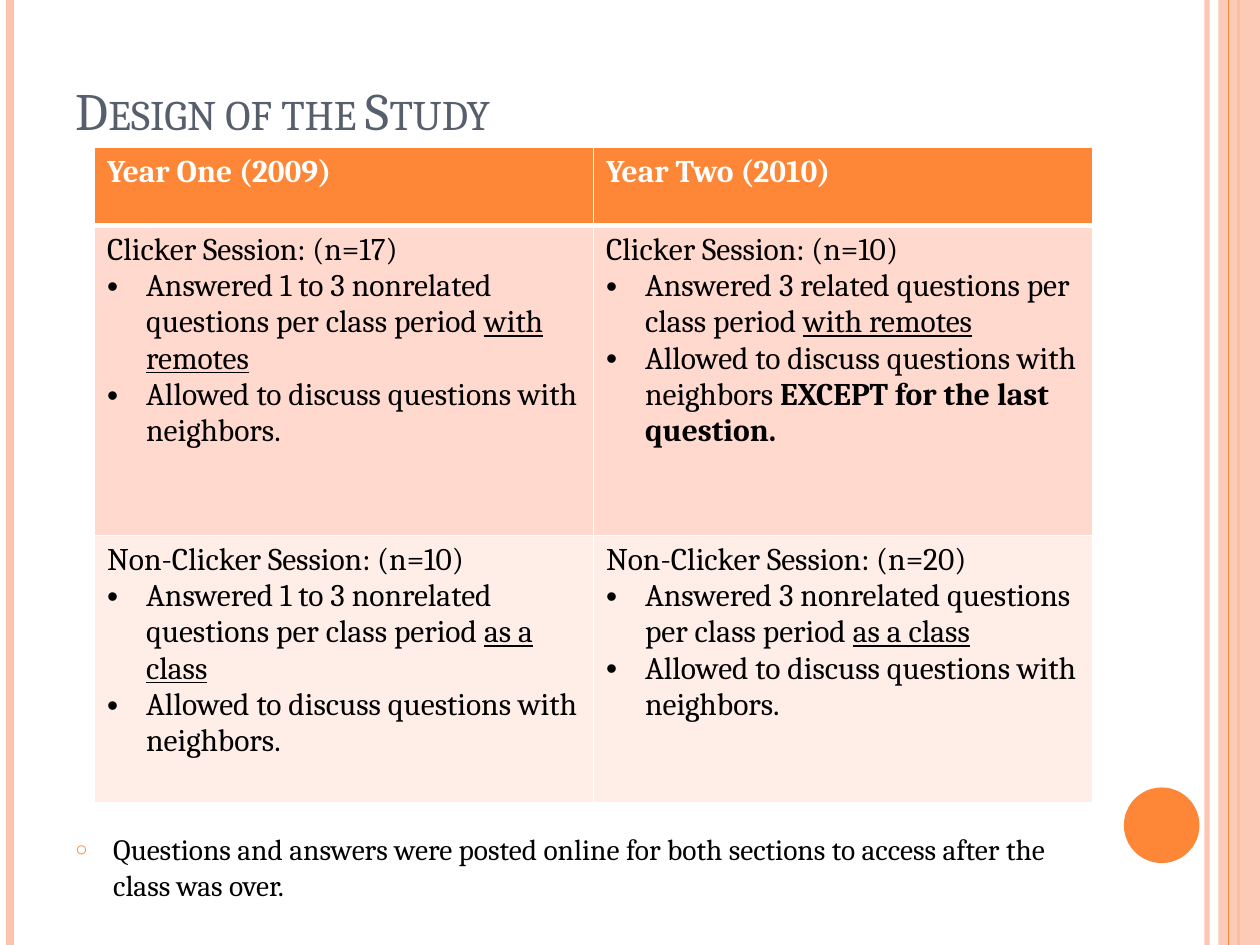
from lxml.etree import SubElement
from pptx import Presentation
from pptx.dml.color import RGBColor
from pptx.enum.shapes import MSO_CONNECTOR, MSO_SHAPE
from pptx.enum.text import MSO_ANCHOR, MSO_AUTO_SIZE, PP_ALIGN
from pptx.oxml import parse_xml
from pptx.oxml.ns import nsdecls, qn
from pptx.util import Inches, Pt

FONT = "Cambria"
ORANGE = RGBColor(0xFE, 0x86, 0x37)
PEACH = RGBColor(0xFE, 0xC3, 0xAE)
SLATE = RGBColor(0x57, 0x5F, 0x6D)
ROSE = RGBColor(0xFF, 0xD9, 0xCE)
BLUSH = RGBColor(0xFF, 0xED, 0xE8)
BLACK = RGBColor(0, 0, 0)
WHITE = RGBColor(0xFF, 0xFF, 0xFF)

PLAIN, UNDERLINE, BOLD = "plain", "underline", "bold"
DISCUSS = [("Allowed to discuss questions with neighbors.", PLAIN)]
HEADERS = ["Year One (2009)", "Year Two (2010)"]


def answered(kind, manner):
    """Return the runs of a bullet about the questions answered."""
    return [(f"Answered {kind} questions per class period ", PLAIN), (manner, UNDERLINE)]


SESSIONS = [
    [
        ("Clicker Session: (n=17)", [answered("1 to 3 nonrelated", "with remotes"), DISCUSS]),
        ("Clicker Session: (n=10)", [
            answered("3 related", "with remotes"),
            [("Allowed to discuss questions with neighbors ", PLAIN),
             ("EXCEPT for the last question.", BOLD)],
        ]),
    ],
    [
        ("Non-Clicker Session: (n=10)", [answered("1 to 3 nonrelated", "as a class"), DISCUSS]),
        ("Non-Clicker Session: (n=20)", [answered("3 nonrelated", "as a class"), DISCUSS]),
    ],
]


def set_font(font, size, color, bold=False):
    """Apply the deck font with a size, colour and weight."""
    font.name, font.size, font.bold = FONT, Pt(size), bold
    font.color.rgb = color


def set_alpha(fill_parent, percent):
    """Make the solid fill under an element partly transparent."""
    color = next(fill_parent.iter(qn("a:srgbClr")))
    SubElement(color, qn("a:alpha"), val=str(percent * 1000))


def set_bullet(paragraph, character, indent, color=None, percent=None):
    """Give a paragraph a hanging bullet."""
    properties = paragraph._p.get_or_add_pPr()
    properties.set("marL", str(Inches(indent)))
    properties.set("indent", str(-Inches(indent)))
    if color is not None:
        holder = SubElement(properties, qn("a:buClr"))
        SubElement(holder, qn("a:srgbClr"), val=str(color))
    if percent is not None:
        SubElement(properties, qn("a:buSzPct"), val=str(percent * 1000))
    SubElement(properties, qn("a:buFont"), typeface="Arial")
    SubElement(properties, qn("a:buChar"), char=character)


def add_stripe(slide, x, height, color, width, alpha=None):
    """Draw a vertical line down the whole slide."""
    line = slide.shapes.add_connector(
        MSO_CONNECTOR.STRAIGHT, Inches(x), Inches(0), Inches(x), Inches(height))
    line.line.color.rgb = color
    line.line.width = Pt(width)
    properties = line._element.spPr
    if alpha is not None:
        set_alpha(properties, alpha)
    SubElement(properties, qn("a:effectLst"))


def add_filled_shape(slide, kind, box, color):
    """Draw a flat shape without an outline."""
    shape = slide.shapes.add_shape(kind, *map(Inches, box))
    shape.shadow.inherit = False
    shape.fill.solid()
    shape.fill.fore_color.rgb = color
    shape.line.fill.background()
    return shape


def add_decoration(slide, width, height):
    """Draw the edge stripes and the page circle."""
    add_stripe(slide, 9.58, height, PEACH, 3, alpha=93)
    add_stripe(slide, 0.08, height, PEACH, 4.5)
    add_stripe(slide, 9.83, height, ORANGE, 1.5)
    band = add_filled_shape(slide, MSO_SHAPE.RECTANGLE, (9.67, 0, width - 9.67, height), PEACH)
    set_alpha(band._element.spPr, 87)
    add_stripe(slide, 9.75, height, ORANGE, 0.75)
    add_filled_shape(slide, MSO_SHAPE.OVAL, (8.92, 6.25, 0.6, 0.6), ORANGE)


def add_title(slide, box, text):
    """Place and format the title in small capitals."""
    title = slide.shapes.title
    title.left, title.top, title.width, title.height = map(Inches, box)
    frame = title.text_frame
    frame.text = text
    frame.auto_size = MSO_AUTO_SIZE.NONE
    frame.vertical_anchor = MSO_ANCHOR.BOTTOM
    paragraph = frame.paragraphs[0]
    paragraph.alignment = PP_ALIGN.LEFT
    set_font(paragraph.font, 30, SLATE)
    paragraph.runs[0].font._element.set("cap", "small")


def style_cell(cell, color, bottom=1, top=1):
    """Fill a cell and rule its edges in white."""
    cell.fill.solid()
    cell.fill.fore_color.rgb = color
    edges = [("lnL", 1), ("lnR", 1), ("lnT", top), ("lnB", bottom)]
    for index, (edge, width) in enumerate(edges):
        cell._tc.get_or_add_tcPr().insert(index, parse_xml(
            f'<a:{edge} {nsdecls("a")} w="{Pt(width)}"><a:solidFill>'
            f'<a:srgbClr val="{WHITE}"/></a:solidFill></a:{edge}>'))


def fill_session(cell, heading, bullets):
    """Write a session heading and its bullets into a cell."""
    frame = cell.text_frame
    frame.text = heading
    set_font(frame.paragraphs[0].font, 18, BLACK)
    for runs in bullets:
        paragraph = frame.add_paragraph()
        set_bullet(paragraph, "•", 0.31)
        set_font(paragraph.font, 18, BLACK)
        for text, style in runs:
            run = paragraph.add_run()
            run.text = text
            if style == UNDERLINE:
                run.font.underline = True
            elif style == BOLD:
                run.font.bold = True


def add_study_table(slide, box, row_heights):
    """Build the table comparing the two years."""
    table = slide.shapes.add_table(
        len(row_heights), len(HEADERS), *map(Inches, box)).table
    for row, height in zip(table.rows, row_heights):
        row.height = Inches(height)
    for column, header in enumerate(HEADERS):
        cell = table.cell(0, column)
        cell.text = header
        set_font(cell.text_frame.paragraphs[0].font, 18, WHITE, bold=True)
        style_cell(cell, ORANGE, bottom=3)
    for row, (sessions, color) in enumerate(zip(SESSIONS, (ROSE, BLUSH)), start=1):
        for column, (heading, bullets) in enumerate(sessions):
            cell = table.cell(row, column)
            fill_session(cell, heading, bullets)
            style_cell(cell, color, top=3 if row == 1 else 1)


def add_note(slide, box, text):
    """Place the bulleted remark under the table."""
    frame = slide.shapes.add_textbox(*map(Inches, box)).text_frame
    frame.word_wrap = True
    frame.text = text
    paragraph = frame.paragraphs[0]
    set_bullet(paragraph, "○", 0.3, ORANGE, 70)
    set_font(paragraph.font, 16.8, BLACK)


def main():
    """Build and save the slide."""
    width, height = 10, 7.5
    presentation = Presentation()
    presentation.slide_width, presentation.slide_height = Inches(width), Inches(height)
    slide = presentation.slides.add_slide(presentation.slide_layouts[5])
    add_decoration(slide, width, height)
    add_title(slide, (0.5, 0.3, 8.17, 0.87), "Design of the Study")
    row_heights = (0.62, 2.46, 2.12)
    add_study_table(slide, (0.75, 1.17, 7.92, sum(row_heights)), row_heights)
    add_note(slide, (0.5, 6.55, 8.17, 0.65),
             "Questions and answers were posted online for both sections "
             "to access after the class was over.")
    presentation.save("out.pptx")


if __name__ == "__main__":
    main()
